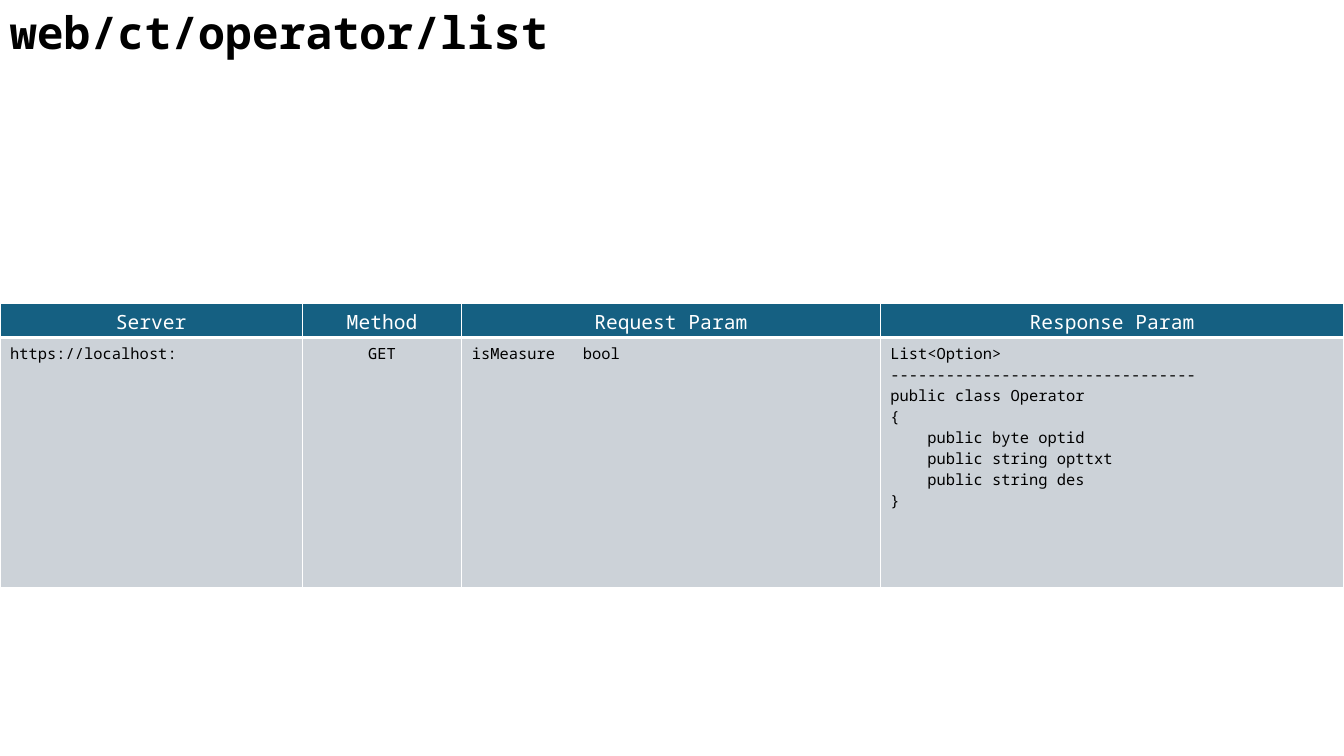
from lxml.etree import SubElement
from pptx import Presentation
from pptx.dml.color import RGBColor
from pptx.enum.text import MSO_AUTO_SIZE, PP_ALIGN
from pptx.oxml.ns import qn
from pptx.util import Inches, Pt

FONT = "Noto Sans Mono"
COLUMN_WIDTHS = [3, 1.58, 4.15, 4.6]
ROW_HEIGHTS = [0.34, 2.48]
HEADERS = ["Server", "Method", "Request Param", "Response Param"]
RESPONSE = """List<Option>
---------------------------------
public class Operator
{
    public byte optid
    public string opttxt
    public string des
}"""
ENDPOINT = ["https://localhost:", "GET", "isMeasure\tbool", RESPONSE]


def style_font(font, size, color, bold=False):
    font.name = FONT
    font.size = Pt(size)
    font.bold = bold
    font.color.rgb = RGBColor.from_string(color)


def add_borders(cell, bottom_width):
    """Draw white cell borders, 1 pt except for the bottom one."""
    properties = cell._tc.get_or_add_tcPr()
    for side, width in zip("LRTB", (1, 1, 1, bottom_width)):
        line = SubElement(properties, qn(f"a:ln{side}"), w=str(Pt(width)))
        SubElement(SubElement(line, qn("a:solidFill")), qn("a:srgbClr"), val="FFFFFF")


prs = Presentation()
prs.slide_width, prs.slide_height = Inches(13.33), Inches(7.5)
slide = prs.slides.add_slide(prs.slide_layouts[6])

title = slide.shapes.add_textbox(0, 0, Inches(9.45), Inches(0.64)).text_frame
title.word_wrap = True
title.auto_size = MSO_AUTO_SIZE.SHAPE_TO_FIT_TEXT
title.text = "web/ct/operator/list"
style_font(title.paragraphs[0].font, 32, "000000", bold=True)

api_table = slide.shapes.add_table(
    2, 4, 0, Inches(3.01), Inches(sum(COLUMN_WIDTHS)), Inches(sum(ROW_HEIGHTS))
).table
api_table.horz_banding = False
for column, width in zip(api_table.columns, COLUMN_WIDTHS):
    column.width = Inches(width)

# texts, fill, text colour, text size, bottom border
row_styles = [
    (HEADERS, "156082", "FFFFFF", 14, 3),
    (ENDPOINT, "CCD2D8", "000000", 11, 1),
]
for row, height, row_style in zip(api_table.rows, ROW_HEIGHTS, row_styles):
    row.height = Inches(height)
    texts, fill, color, size, bottom_width = row_style
    for cell, text in zip(row.cells, texts):
        add_borders(cell, bottom_width)
        cell.fill.solid()
        cell.fill.fore_color.rgb = RGBColor.from_string(fill)
        cell.text = text
        centred = texts is HEADERS or text == "GET"
        for paragraph in cell.text_frame.paragraphs:
            paragraph.alignment = PP_ALIGN.CENTER if centred else PP_ALIGN.LEFT
            if "\t" in text:
                tabs = SubElement(paragraph._p.get_or_add_pPr(), qn("a:tabLst"))
                SubElement(tabs, qn("a:tab"), pos=str(Inches(1.1)), algn="l")
            style_font(paragraph.font, size, color)

prs.save("out.pptx")
